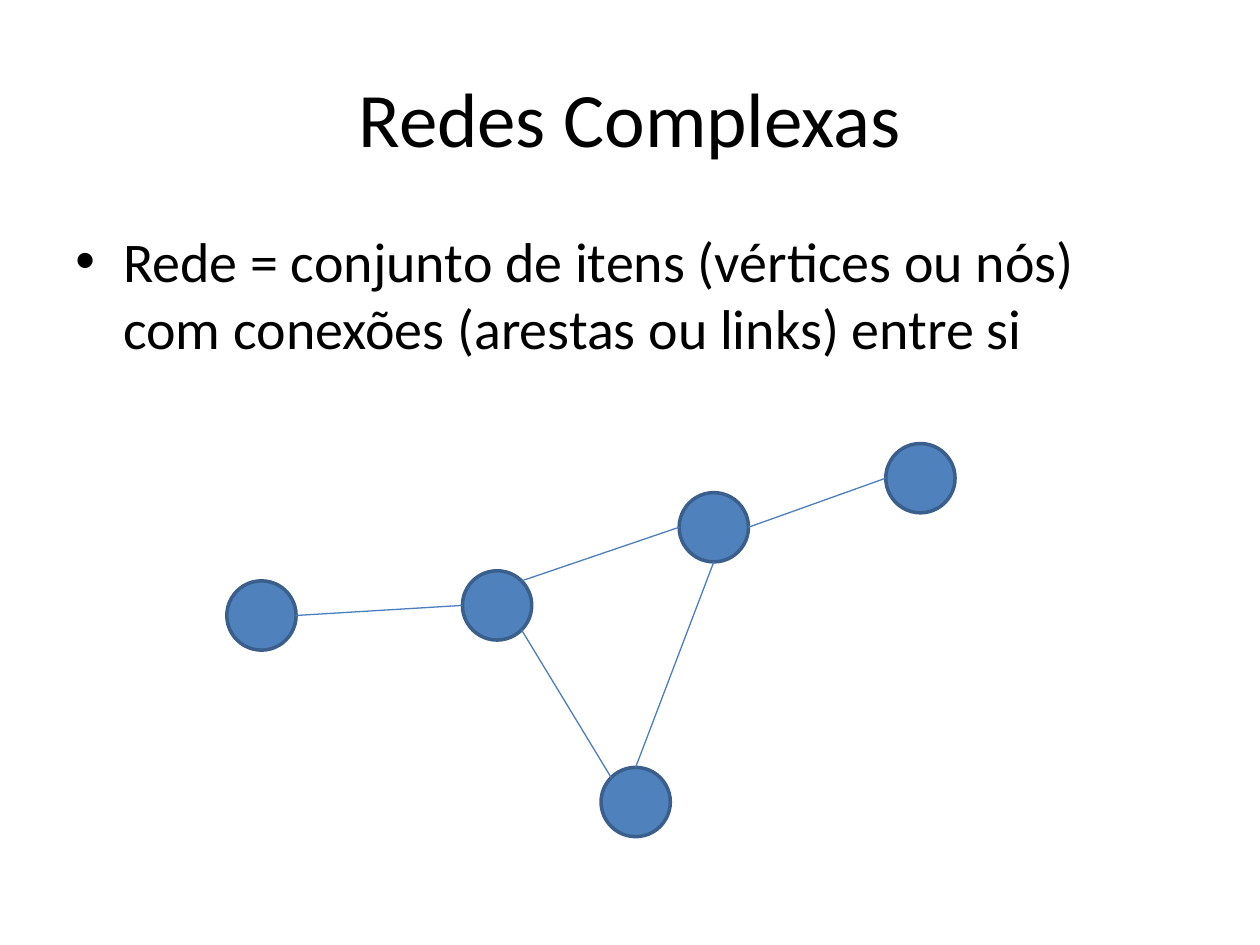
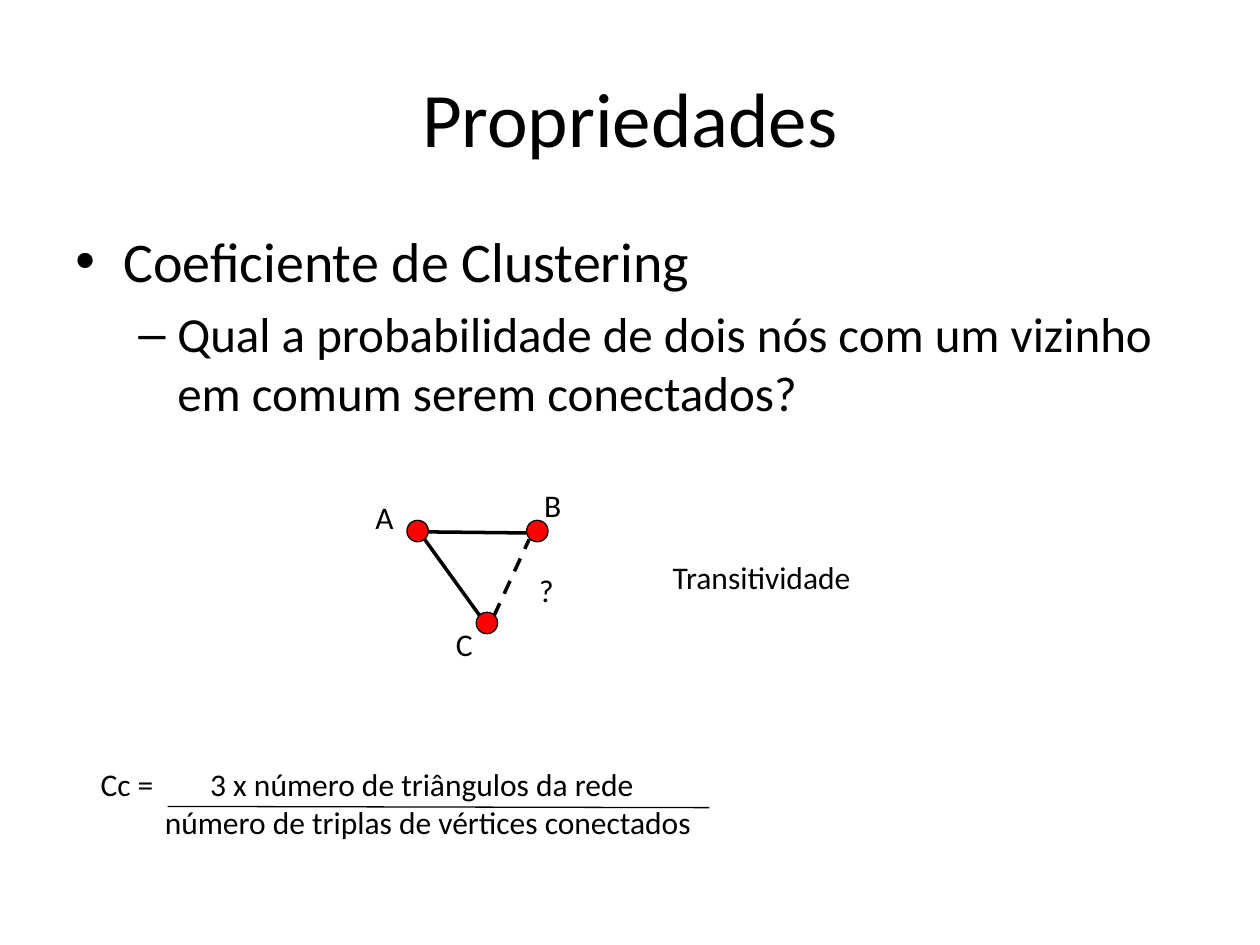
from math import cos, radians, sin
from typing import NamedTuple

from lxml import etree
from pptx import Presentation
from pptx import util as u
from pptx.dml.color import RGBColor
from pptx.enum import dml, shapes, text
from pptx.oxml.ns import qn

# Shared style
FONT = "Calibri"
BLACK = RGBColor(0x00, 0x00, 0x00)
RED = RGBColor(0xFF, 0x00, 0x00)
NODE_BLUE = RGBColor(0x4F, 0x81, 0xBD)
NODE_BORDER = RGBColor(0x3A, 0x5F, 0x8C)
EDGE_BLUE = RGBColor(0x4B, 0x7E, 0xBC)
TITLE_SIZE, LABEL_SIZE = 44, 18


class Bullet(NamedTuple):
    symbol: str
    size: int
    margin: float
    hanging: float
    space_before: float


class Item(NamedTuple):
    words: str
    bullet: Bullet


class Node(NamedTuple):
    left: float
    top: float
    diameter: float

    def rim(self, degrees: float) -> tuple[float, float]:
        """Point on the circle, anticlockwise from the right."""
        radius = self.diameter / 2
        angle = radians(degrees)
        return (self.left + radius * (1 + cos(angle)),
                self.top + radius * (1 - sin(angle)))


class NodeStyle(NamedTuple):
    fill: RGBColor
    border: RGBColor
    width: float


class Edge(NamedTuple):
    start: tuple[float, float]
    end: tuple[float, float]
    color: RGBColor
    width: float
    dashed: bool = False


class Label(NamedTuple):
    words: str
    left: float
    top: float
    width: float


LEVEL_ONE = Bullet("•", 32, 0.38, 0.38, 0)
LEVEL_TWO = Bullet("–", 28, 0.81, 0.31, 5.6)
BLUE_NODE = NodeStyle(NODE_BLUE, NODE_BORDER, 2)
RED_NODE = NodeStyle(RED, BLACK, 0.75)


# Drawing functions
def add_span(para, words: str, size: float) -> None:
    span = para.add_run()
    span.text = words
    span.font.name = FONT
    span.font.size = u.Pt(size)
    span.font.color.rgb = BLACK


def add_page(deck, title: str):
    page = deck.slides.add_slide(deck.slide_layouts[5])
    box = page.shapes.title
    box.left, box.top = u.Inches(0.5), u.Inches(0.3)
    box.width, box.height = u.Inches(9), u.Inches(1.25)
    box.text_frame.vertical_anchor = text.MSO_ANCHOR.MIDDLE
    para = box.text_frame.paragraphs[0]
    para.alignment = text.PP_ALIGN.CENTER
    add_span(para, title, TITLE_SIZE)
    return page


def add_box(page, left: float, top: float, width: float, height: float):
    box = page.shapes.add_textbox(u.Inches(left), u.Inches(top),
                                  u.Inches(width), u.Inches(height))
    box.text_frame.word_wrap = True
    return box.text_frame


def set_indent(para, margin: float, hanging: float = 0):
    properties = para._p.get_or_add_pPr()
    properties.set("marL", str(u.Inches(margin)))
    properties.set("indent", str(-u.Inches(hanging)))
    return properties


def add_bullets(page, height: float, items: list[Item]) -> None:
    frame = add_box(page, 0.5, 1.75, 9, height)
    for index, (words, bullet) in enumerate(items):
        para = frame.add_paragraph() if index else frame.paragraphs[0]
        properties = set_indent(para, bullet.margin, bullet.hanging)
        etree.SubElement(properties, qn("a:buFont"), typeface="Arial")
        etree.SubElement(properties, qn("a:buChar"), char=bullet.symbol)
        para.space_before = u.Pt(bullet.space_before)
        add_span(para, words, bullet.size)


def add_node(page, node: Node, style: NodeStyle) -> None:
    size = u.Inches(node.diameter)
    circle = page.shapes.add_shape(shapes.MSO_SHAPE.OVAL, u.Inches(node.left),
                                   u.Inches(node.top), size, size)
    circle.shadow.inherit = False
    circle.fill.solid()
    circle.fill.fore_color.rgb = style.fill
    circle.line.color.rgb = style.border
    circle.line.width = u.Pt(style.width)


def add_edge(page, edge: Edge) -> None:
    points = [u.Inches(value) for value in (*edge.start, *edge.end)]
    line = page.shapes.add_connector(shapes.MSO_CONNECTOR.STRAIGHT, *points)
    line.line.color.rgb = edge.color
    line.line.width = u.Pt(edge.width)
    if edge.dashed:
        line.line.dash_style = dml.MSO_LINE.DASH
    etree.SubElement(line._element.spPr, qn("a:effectLst"))


def add_label(page, label: Label) -> None:
    frame = add_box(page, label.left, label.top, label.width, 0.4)
    frame.word_wrap = False
    frame.auto_size = text.MSO_AUTO_SIZE.SHAPE_TO_FIT_TEXT
    add_span(frame.paragraphs[0], label.words, LABEL_SIZE)


# Slide 1: a small network
def build_network(deck) -> None:
    page = add_page(deck, "Redes Complexas")
    add_bullets(page, 4.95, [Item(
        "Rede = conjunto de itens (vértices ou nós) com conexões "
        "(arestas ou links) entre si", LEVEL_ONE)])

    far_left, hub, upper, lower, far_right = nodes = [
        Node(left, top, 0.55) for left, top in
        [(1.8, 4.61), (3.67, 4.53), (5.39, 3.91), (4.77, 6.09), (7.03, 3.52)]]
    for node in nodes:
        add_node(page, node, BLUE_NODE)

    links = [
        (hub.rim(45), upper.rim(180)),
        (hub.rim(-45), lower.rim(135)),
        (upper.rim(-90), lower.rim(90)),
        (upper.rim(0), far_right.rim(180)),
        (far_left.rim(0), hub.rim(180)),
    ]
    for start, end in links:
        add_edge(page, Edge(start, end, EDGE_BLUE, 0.75))


# Slide 2: clustering coefficient
def build_clustering(deck) -> None:
    page = add_page(deck, "Propriedades")
    add_bullets(page, 3.64, [
        Item("Coeficiente de Clustering", LEVEL_ONE),
        Item("Qual a probabilidade de dois nós com um vizinho em comum "
             "serem conectados?", LEVEL_TWO),
    ])

    # Triangle A, B, C with the open question between B and C
    for edge in [
        Edge((3.24, 4.22), (4.19, 4.23), BLACK, 2),
        Edge((3.81, 4.89), (3.37, 4.28), BLACK, 2),
        Edge((3.92, 4.89), (4.2, 4.28), BLACK, 2, dashed=True),
    ]:
        add_edge(page, edge)
    for left, top in [(3.23, 4.13), (4.18, 4.13), (3.78, 4.86)]:
        add_node(page, Node(left, top, 0.17), RED_NODE)
    for label in [
        Label("?", 4.18, 4.48, 0.32),
        Label("A", 2.88, 3.9, 0.35),
        Label("B", 4.22, 3.81, 0.35),
        Label("C", 3.52, 4.91, 0.35),
        Label("Transitividade", 5.24, 4.38, 1.69),
    ]:
        add_label(page, label)

    # Formula: numerator on a tab stop, denominator indented below the bar
    frame = add_box(page, 0.7, 6.02, 5.07, 0.71)
    numerator = frame.paragraphs[0]
    tabs = etree.SubElement(numerator._p.get_or_add_pPr(), qn("a:tabLst"))
    etree.SubElement(tabs, qn("a:tab"), pos=str(u.Inches(0.87)), algn="l")
    add_span(numerator, "Cc =\t3 x número de triângulos da rede", LABEL_SIZE)
    denominator = frame.add_paragraph()
    set_indent(denominator, 0.51)
    add_span(denominator, "número de triplas de vértices conectados", LABEL_SIZE)
    add_edge(page, Edge((1.33, 6.4), (5.63, 6.41), BLACK, 0.75))


def main() -> None:
    deck = Presentation()
    deck.slide_width, deck.slide_height = u.Inches(10), u.Inches(7.5)
    build_network(deck)
    build_clustering(deck)
    deck.save("out.pptx")


if __name__ == "__main__":
    main()
